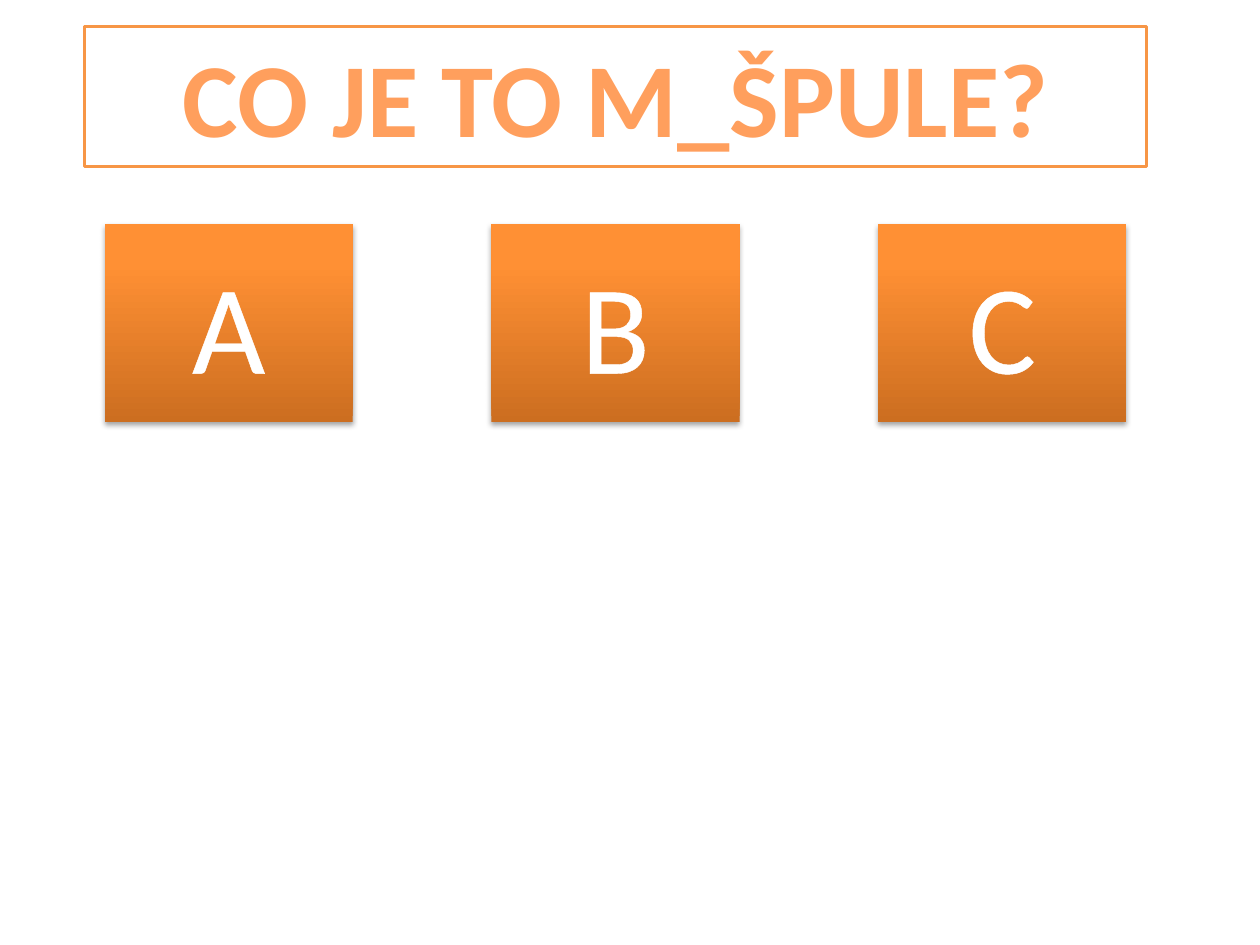
from dataclasses import dataclass

from lxml import etree
from pptx import Presentation
from pptx import util as u
from pptx.dml.color import RGBColor
from pptx.enum import shapes, text
from pptx.oxml import parse_xml
from pptx.oxml.ns import nsdecls, qn

FONT = "Calibri"
WHITE = "FFFFFF"
ORANGE = "F79646"
TITLE_STOPS = [(0, "FFA367"), (25, "FF9F5D"), (50, "F38E3A"), (75, "FF9F5D"), (100, "FFA367")]
TILE_STOPS = [(0, "CC6E20"), (80, "FF9034"), (100, "FF9136")]


@dataclass
class Answer:
    letter: str
    column: int


@dataclass
class Grid:
    left: float = 0.83
    top: float = 1.78
    width: float = 1.97
    height: float = 1.57
    pitch: float = 3.07


def rgb(value: str) -> RGBColor:
    return RGBColor.from_string(value)


def place(shape, left: float, top: float, width: float, height: float) -> None:
    shape.left, shape.top = u.Inches(left), u.Inches(top)
    shape.width, shape.height = u.Inches(width), u.Inches(height)


def gradient(fill, owner, stops: list, angle: int) -> None:
    fill.gradient()
    grad = next(owner.iter(qn("a:gradFill")))
    stop_list = grad.find(qn("a:gsLst"))
    for old in list(stop_list):
        stop_list.remove(old)
    for position, color in stops:
        stop = etree.SubElement(stop_list, qn("a:gs"), pos=str(position * 1000))
        etree.SubElement(stop, qn("a:srgbClr"), val=color)
    grad.find(qn("a:lin")).set("ang", str(angle * 60000))


def write(shape, words: str, *, size: float, color: str = WHITE, bold: bool = False,
          align=text.PP_ALIGN.CENTER, anchor=text.MSO_ANCHOR.TOP,
          stops: list | None = None, outline: float = 0) -> None:
    frame = shape.text_frame
    frame.word_wrap = True
    frame.vertical_anchor = anchor
    paragraph = frame.paragraphs[0]
    paragraph.alignment = align
    run = paragraph.add_run()
    run.text = words
    font = run.font
    font.name, font.size, font.bold = FONT, u.Pt(size), bold
    if stops:
        gradient(font.fill, run._r, stops, 90)
    else:
        font.color.rgb = rgb(color)
    if outline:
        run._r.get_or_add_rPr().insert(0, parse_xml(
            f'<a:ln {nsdecls("a")} w="{u.Pt(outline)}"><a:solidFill>'
            f'<a:srgbClr val="{color}"/></a:solidFill></a:ln>'))


def add_shadow(shape) -> None:
    shape.shadow.inherit = False
    effects = shape._element.spPr.find(qn("a:effectLst"))
    effects.append(parse_xml(
        f'<a:outerShdw {nsdecls("a")} blurRad="{u.Pt(3.1)}" dist="{u.Pt(1.8)}" '
        'dir="5400000" rotWithShape="0"><a:srgbClr val="000000">'
        '<a:alpha val="35000"/></a:srgbClr></a:outerShdw>'))


def add_question(slide, words: str) -> None:
    question = slide.shapes.title
    place(question, 0.67, 0.21, 8.43, 1.11)
    question.fill.solid()
    question.fill.fore_color.rgb = rgb(WHITE)
    question.line.color.rgb = rgb(ORANGE)
    question.line.width = u.Pt(2)
    write(question, words, size=60, bold=True, stops=TITLE_STOPS)
    question.text_frame.auto_size = text.MSO_AUTO_SIZE.SHAPE_TO_FIT_TEXT


def add_answer(slide, answer: Answer, grid: Grid) -> None:
    tile = slide.shapes.add_shape(shapes.MSO_SHAPE.RECTANGLE, 0, 0, 0, 0)
    place(tile, grid.left + answer.column * grid.pitch, grid.top, grid.width, grid.height)
    gradient(tile.fill, tile._element.spPr, TILE_STOPS, 270)
    tile.line.fill.background()
    add_shadow(tile)
    write(tile, answer.letter, size=72, anchor=text.MSO_ANCHOR.MIDDLE, outline=1.45)


def main() -> None:
    deck = Presentation()
    deck.slide_width, deck.slide_height = u.Inches(10), u.Inches(7.5)
    slide = deck.slides.add_slide(deck.slide_layouts[5])
    add_question(slide, "CO JE TO M_ŠPULE?")
    for column, letter in enumerate("ABC"):
        add_answer(slide, Answer(letter, column), Grid())
    deck.save("out.pptx")


if __name__ == "__main__":
    main()
